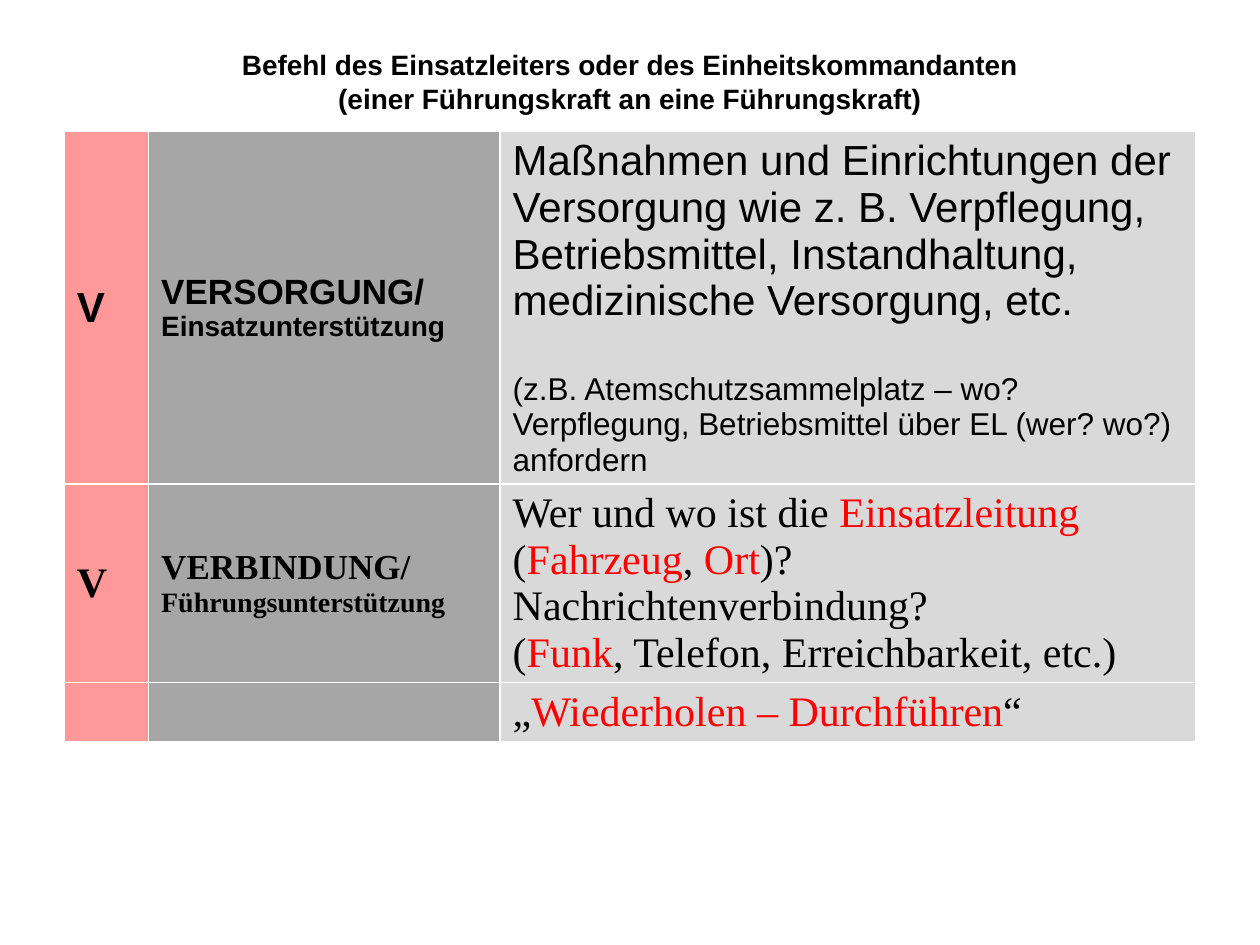
from lxml import etree
from pptx import Presentation
from pptx.dml.color import RGBColor
from pptx.enum.text import MSO_ANCHOR, PP_ALIGN
from pptx.oxml.ns import qn
from pptx.util import Inches, Pt

MIDDLE, CENTER = MSO_ANCHOR.MIDDLE, PP_ALIGN.CENTER
SANS, SERIF = "Arial", "Times New Roman"
BLACK, RED, WHITE = "000000", "FF0000", "FFFFFF"
LEFT, WIDTH = 0.51, 8.98
COLUMNS = [0.67, 2.79, 5.52]
COLUMN_FILLS = ["FF9999", "A6A6A6", "D9D9D9"]

TITLE = [
    ("Befehl des Einsatzleiters oder des Einheitskommandanten", 16, 0),
    ("(einer Führungskraft an eine Führungskraft)", 16, 0),
]
# Each paragraph is (text, size, space before); asterisks enclose red words.
ROWS = [
    (2.8, SANS, [
        [("V", 24, 0)],
        [("VERSORGUNG/", 20, 0), ("Einsatzunterstützung", 16, 0)],
        [("Maßnahmen und Einrichtungen der Versorgung wie z. B. Verpflegung, "
          "Betriebsmittel, Instandhaltung, medizinische Versorgung, etc.", 24, 0),
         ("(z.B. Atemschutzsammelplatz – wo?", 18, 27),
         ("Verpflegung, Betriebsmittel über EL (wer? wo?) anfordern", 18, 0)],
    ]),
    (1.57, SERIF, [
        [("V", 24, 0)],
        [("VERBINDUNG/", 20, 0), ("Führungsunterstützung", 16, 0)],
        [("Wer und wo ist die *Einsatzleitung* (*Fahrzeug*, *Ort*)?", 24, 0),
         ("Nachrichtenverbindung?\v(*Funk*, Telefon, Erreichbarkeit, etc.)", 24, 0)],
    ]),
    (0.46, SERIF, [[], [], [("„*Wiederholen – Durchführen*“", 24, 0)]]),
]


def color(value):
    """Turn a hex string into a colour."""
    return RGBColor.from_string(value)


def write(tf, paragraphs, font, bold, align=None):
    """Fill a text frame with paragraphs, with marked words in red."""
    for i, (text, size, before) in enumerate(paragraphs):
        p = tf.add_paragraph() if i else tf.paragraphs[0]
        p.alignment = align
        p.space_before = Pt(before)
        p.font.name, p.font.size, p.font.bold = font, Pt(size), bold
        p.font.color.rgb = color(BLACK)
        for j, part in enumerate(text.split("*")):
            for k, line in enumerate(part.split("\v")):
                if k:
                    p.add_line_break()
                r = p.add_run()
                r.text = line
                if j % 2:
                    r.font.color.rgb = color(RED)


def add_borders(cell):
    """Draw a thin white line on every side of a cell."""
    tc_pr = cell._tc.get_or_add_tcPr()
    for side in ("lnL", "lnR", "lnT", "lnB"):
        ln = etree.SubElement(tc_pr, qn(f"a:{side}"), w=str(Pt(1)))
        fill = etree.SubElement(ln, qn("a:solidFill"))
        etree.SubElement(fill, qn("a:srgbClr"), val=WHITE)


def add_title(s, left, top, width, height):
    """Place the two-line heading in the title placeholder."""
    sp = s.shapes.title
    sp.left, sp.top, sp.width, sp.height = map(Inches, (left, top, width, height))
    sp.fill.solid()
    sp.fill.fore_color.rgb = color(WHITE)
    sp.text_frame.vertical_anchor = MIDDLE
    write(sp.text_frame, TITLE, SANS, True, CENTER)


def add_orders(s, left, top, width):
    """Place the table of orders: letter, heading and contents."""
    height = sum(row[0] for row in ROWS)
    box = map(Inches, (left, top, width, height))
    table = s.shapes.add_table(len(ROWS), len(COLUMNS), *box).table
    for column, share in zip(table.columns, COLUMNS):
        column.width = Inches(width * share / sum(COLUMNS))
    for row, (row_height, font, texts) in zip(table.rows, ROWS):
        row.height = Inches(row_height)
        for i, (cell, fill, paragraphs) in enumerate(zip(row.cells, COLUMN_FILLS, texts)):
            add_borders(cell)
            cell.fill.solid()
            cell.fill.fore_color.rgb = color(fill)
            cell.vertical_anchor = MIDDLE
            write(cell.text_frame, paragraphs, font, i < 2)


def main():
    """Build and save the slide."""
    prs = Presentation()
    prs.slide_width, prs.slide_height = Inches(10), Inches(7.5)
    s = prs.slides.add_slide(prs.slide_layouts[5])
    add_title(s, LEFT, 0.29, WIDTH, 0.71)
    add_orders(s, LEFT, 1.04, WIDTH)
    prs.save("out.pptx")


if __name__ == "__main__":
    main()
